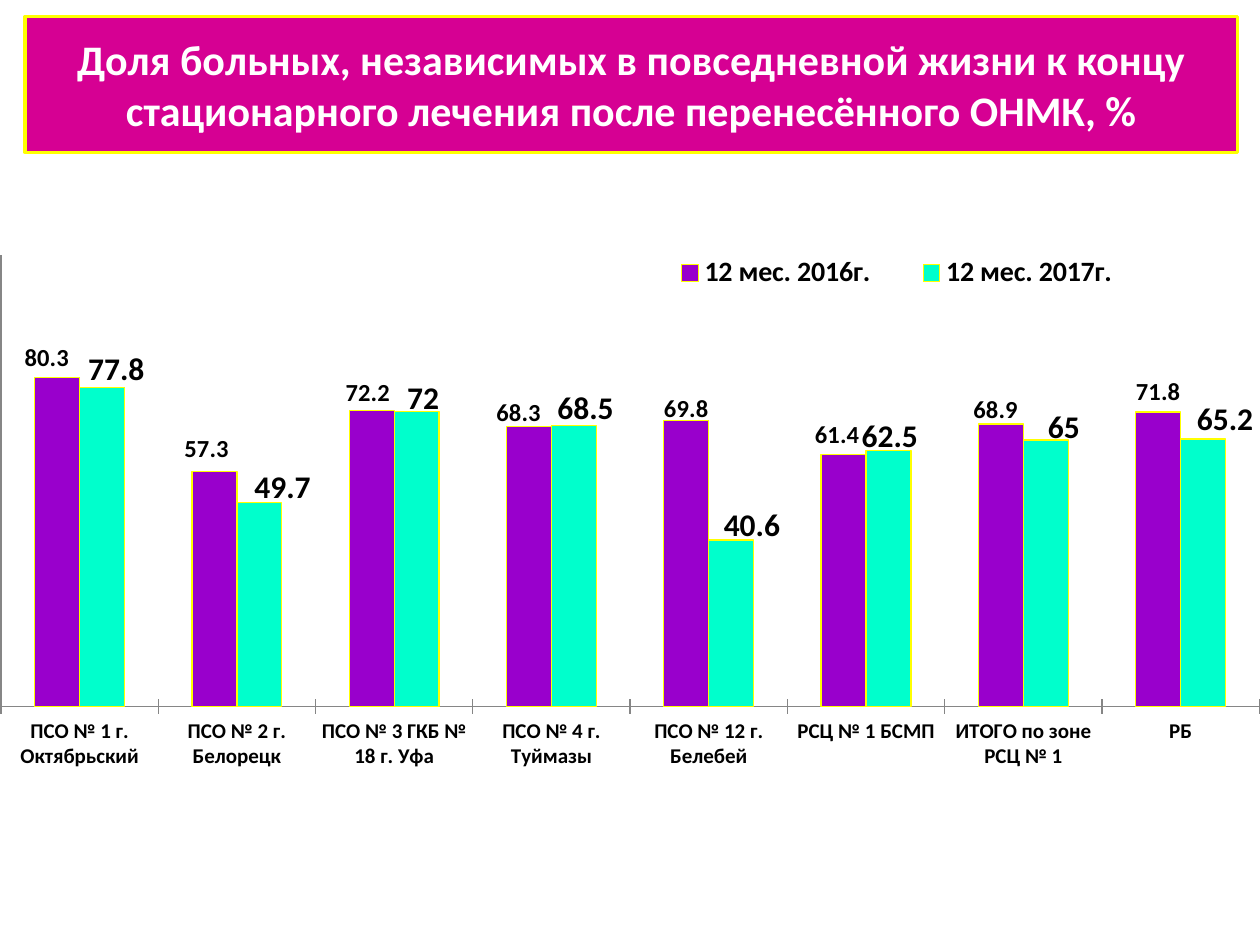
import pptx
import pptx.util
from lxml import etree
from pptx.chart.data import CategoryChartData
from pptx.dml.color import RGBColor
from pptx.enum.chart import XL_CHART_TYPE, XL_LABEL_POSITION, XL_LEGEND_POSITION
from pptx.enum.chart import XL_TICK_LABEL_POSITION, XL_TICK_MARK
from pptx.enum.text import MSO_ANCHOR, PP_ALIGN
from pptx.oxml.ns import qn
from pptx.util import Inches, Pt

TITLE = ("Доля больных, независимых в повседневной жизни к концу "
         "стационарного лечения после перенесённого ОНМК, %")
WARDS = ["ПСО № 1 г. Октябрьский", "ПСО № 2 г. Белорецк",
         "ПСО № 3 ГКБ № 18 г. Уфа", "ПСО № 4 г. Туймазы",
         "ПСО № 12 г. Белебей", "РСЦ № 1 БСМП", "ИТОГО по зоне РСЦ № 1", "РБ"]
# Label shifts (right, down) are in thousandths of the chart's size.
YEARS = [
    {"name": "12 мес. 2016г.", "fill": "9900CC", "size": 14,
     "vals": [80.3, 57.3, 72.2, 68.3, 69.8, 61.4, 68.9, 71.8],
     "shifts": [(-8, 1), (-6, -3), (-3, 4), (-8, 10), (0, 13), (-5, 1), (-4, 9)]},
    {"name": "12 мес. 2017г.", "fill": "00FFCC", "size": 18,
     "vals": [77.8, 49.7, 72, 68.5, 40.6, 62.5, 65, 65.2],
     "shifts": [(11, 9), (18, 13), (5, 16), (9, 10), (16, 14), (1, 14),
                (14, 16), (17, 6)]},
]
THEME = {"font": "Calibri", "ink": "000000", "banner": "D60093", "edge": "FFFF00",
         "light": "FFFFFF", "axis": "868686", "title": 24, "legend": 16, "cats": 12}


def color(code):
    return RGBColor.from_string(code)


def style(font, size, ink=THEME["ink"], bold=True):
    font.name, font.size, font.bold = THEME["font"], Pt(size), bold
    font.color.rgb = color(ink)


def write(frame, text, size, ink, align=PP_ALIGN.CENTER):
    frame.word_wrap, frame.vertical_anchor = True, MSO_ANCHOR.MIDDLE
    para = frame.paragraphs[0]
    para.alignment = align
    run = para.add_run()
    run.text = text
    style(run.font, size, ink)


def paint(part, fill, width):
    part.fill.solid()
    part.fill.fore_color.rgb = color(fill)
    part.line.color.rgb = color(THEME["edge"])
    part.line.width = Pt(width)


def layout(**vals):
    """Make a manual chart layout from its child names and values."""
    root = etree.Element(qn("c:layout"))
    manual = etree.SubElement(root, qn("c:manualLayout"))
    for key, val in vals.items():
        etree.SubElement(manual, qn("c:" + key)).set("val", str(val))
    return root


def frame_at(left, top, width, height):
    return layout(xMode="edge", yMode="edge", x=left, y=top, w=width, h=height)


def add_title(slide):
    title = slide.shapes.title
    title.left, title.top = Inches(0.2), Inches(0.13)
    title.width, title.height = Inches(9.62), Inches(1.08)
    geom = etree.SubElement(title._element.spPr, qn("a:prstGeom"))
    geom.set("prst", "doubleWave")
    etree.SubElement(geom, qn("a:avLst"))
    paint(title, THEME["banner"], 2)
    write(title.text_frame, TITLE, THEME["title"], THEME["light"])


def add_labels(series, year):
    labels = series.data_labels
    labels.show_value = True
    labels.position = XL_LABEL_POSITION.OUTSIDE_END
    style(labels.font, year["size"])
    for num, (right, down) in enumerate(year["shifts"]):
        label = series.points[num].data_label
        style(label.font, year["size"])
        label.position = XL_LABEL_POSITION.OUTSIDE_END
        node = label._get_or_add_dLbl()
        node.find(qn("c:idx")).addnext(layout(x=right / 1000, y=down / 1000))


def add_chart(slide):
    data = CategoryChartData()
    data.categories = WARDS
    for year in YEARS:
        data.add_series(year["name"], year["vals"])
    chart = slide.shapes.add_chart(
        XL_CHART_TYPE.COLUMN_CLUSTERED, Inches(-0.28), Inches(1.23),
        Inches(10.28), Inches(5.5), data).chart
    style(chart.font, 18, bold=False)
    chart.has_title = False

    plot = chart.plots[0]
    plot.gap_width, plot.overlap, plot.vary_by_categories = 150, 0, False
    for series, year in zip(plot.series, YEARS):
        paint(series.format, year["fill"], 0.75)
        add_labels(series, year)

    area = chart._chartSpace.chart.plotArea
    for old in area.findall(qn("c:layout")):
        area.remove(old)
    inner = frame_at(0.028, 0.145, 0.972, 0.651)
    target = etree.Element(qn("c:layoutTarget"))
    target.set("val", "inner")
    inner[0].insert(0, target)
    area.insert(0, inner)

    for axis in (chart.category_axis, chart.value_axis):
        axis.has_major_gridlines = False
        axis.major_tick_mark = XL_TICK_MARK.CROSS
        axis.format.line.color.rgb = color(THEME["axis"])
        axis.format.line.width = Pt(0.75)
    style(chart.category_axis.tick_labels.font, THEME["cats"])
    scale = chart.value_axis
    scale.minimum_scale, scale.maximum_scale, scale.major_unit = 0, 110, 120
    scale.tick_label_position = XL_TICK_LABEL_POSITION.NONE

    chart.has_legend = True
    legend = chart.legend
    legend.position = XL_LEGEND_POSITION.TOP
    legend.include_in_layout = False
    style(legend.font, THEME["legend"])
    for old in legend._element.findall(qn("c:layout")):
        legend._element.remove(old)
    legend._element.find(qn("c:legendPos")).addnext(frame_at(0.52, 0.14, 0.4, 0.06))


def main():
    deck = pptx.Presentation()
    deck.slide_width, deck.slide_height = Inches(10), Inches(7.5)
    slide = deck.slides.add_slide(deck.slide_layouts[5])
    add_title(slide)
    add_chart(slide)
    deck.save("out.pptx")


if __name__ == "__main__":
    main()
